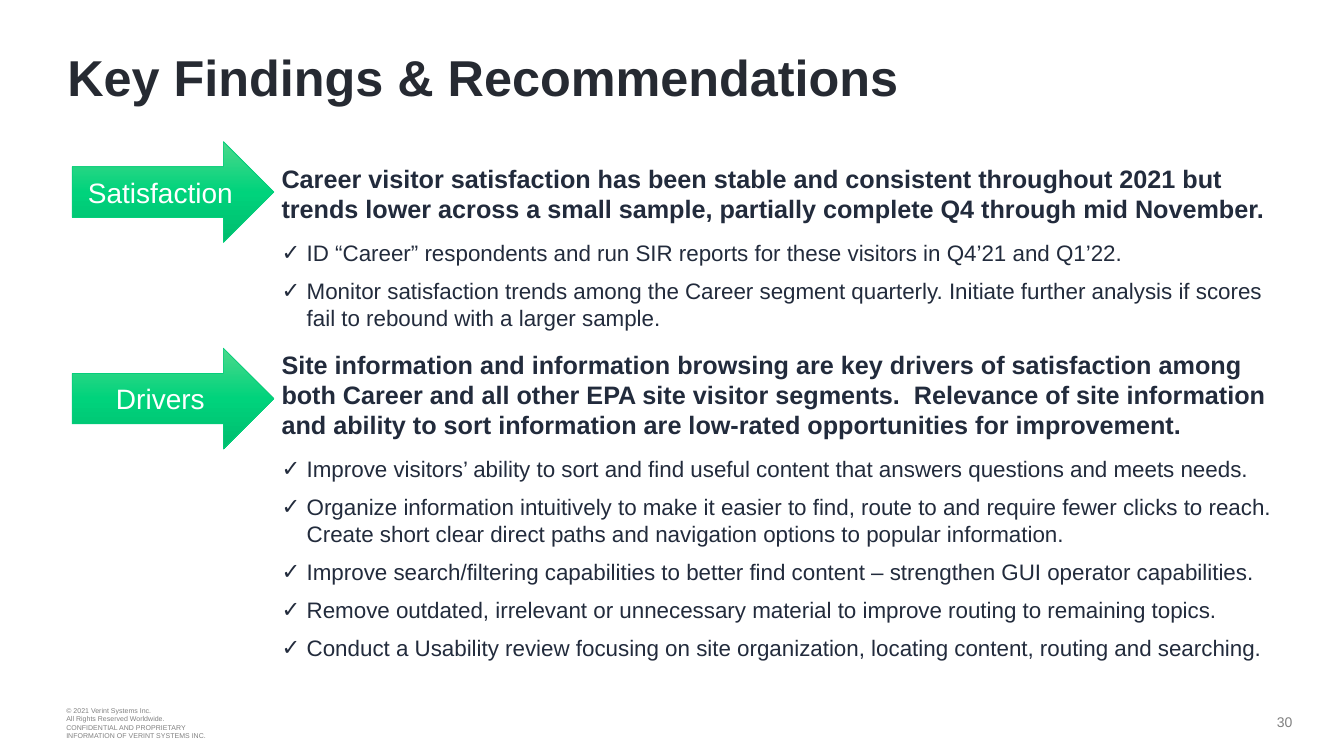
"""Build the Key Findings & Recommendations slide."""
from copy import deepcopy
from dataclasses import dataclass

from lxml.etree import SubElement
from pptx import Presentation
from pptx.dml.color import RGBColor
from pptx.enum.shapes import MSO_SHAPE
from pptx.enum.text import MSO_ANCHOR, PP_ALIGN
from pptx.oxml.ns import qn
from pptx.util import Pt

TITLE = "Key Findings & Recommendations"
FINDINGS = [
    ("Career visitor satisfaction has been stable and consistent throughout 2021 but "
     "trends lower across a small sample, partially complete Q4 through mid November.",
     ["ID “Career” respondents and run SIR reports for these visitors in Q4’21 and Q1’22.",
      "Monitor satisfaction trends among the Career segment quarterly. Initiate further "
      "analysis if scores fail to rebound with a larger sample."]),
    ("Site information and information browsing are key drivers of satisfaction among both "
     "Career and all other EPA site visitor segments.  Relevance of site information and "
     "ability to sort information are low-rated opportunities for improvement.",
     ["Improve visitors’ ability to sort and find useful content that answers questions "
      "and meets needs.",
      "Organize information intuitively to make it easier to find, route to and require fewer "
      "clicks to reach. Create short clear direct paths and navigation options to popular "
      "information.",
      "Improve search/filtering capabilities to better find content – strengthen GUI operator "
      "capabilities.",
      "Remove outdated, irrelevant or unnecessary material to improve routing to remaining "
      "topics.",
      "Conduct a Usability review focusing on site organization, locating content, routing "
      "and searching."]),
]
ARROWS = [("Satisfaction", 101.2), ("Drivers", 248.8)]
COPYRIGHT = [
    "© 2021 Verint Systems Inc.",
    "All Rights Reserved Worldwide.",
    "CONFIDENTIAL AND PROPRIETARY",
    "INFORMATION OF VERINT SYSTEMS INC.",
]
PAGE = "30"


@dataclass(frozen=True)
class Theme:
    """Colours, font and type sizes."""
    font: str = "Arial"
    title: str = "262A32"
    body: str = "222B3C"
    muted: str = "808080"
    label: str = "FFFFFF"
    outline: str = "05CE7B"
    gradient: tuple = ((0, "4BD88B"), (0.5, "00D37C"), (1, "00BC6E"))
    title_size: float = 36
    label_size: float = 20
    finding_size: float = 18
    action_size: float = 16
    page_size: float = 10
    legal_size: float = 5


T = Theme()


def add_run(p, text, size, color, bold=False):
    r = p.add_run()
    r.text = text
    r.font.name, r.font.size, r.font.bold = T.font, Pt(size), bold
    r.font.color.rgb = RGBColor.from_string(color)


def add_box(s, x, y, w, h, anchor=MSO_ANCHOR.MIDDLE):
    tf = s.shapes.add_textbox(Pt(x), Pt(y), Pt(w), Pt(h)).text_frame
    tf.word_wrap = True
    tf.vertical_anchor = anchor
    return tf


def next_paragraph(tf):
    first = tf.paragraphs[0]
    return tf.add_paragraph() if first.runs else first


def add_check(p, indent=18):
    pPr = p._p.get_or_add_pPr()
    pPr.set("marL", str(Pt(indent)))
    pPr.set("indent", str(-Pt(indent)))
    SubElement(pPr, qn("a:buFont"), typeface=T.font)
    SubElement(pPr, qn("a:buChar"), char="✓")


def add_findings(s):
    tf = add_box(s, 194, 113, 723.6, 370, MSO_ANCHOR.TOP)
    for i, (finding, actions) in enumerate(FINDINGS):
        p = next_paragraph(tf)
        p.space_before, p.space_after = Pt(10 if i else 0), Pt(6)
        add_run(p, finding, T.finding_size, T.body, True)
        for action in actions:
            p = tf.add_paragraph()
            p.level = 1
            add_check(p)
            p.space_before, p.space_after = Pt(5), Pt(3)
            add_run(p, action, T.action_size, T.body)


def add_arrow(s, text, y):
    sp = s.shapes.add_shape(MSO_SHAPE.RIGHT_ARROW, Pt(51.6), Pt(y), Pt(144), Pt(72))
    sp.shadow.inherit = False
    sp.fill.gradient()
    sp.fill.gradient_angle = 270
    stops = sp._element.spPr.find(".//" + qn("a:gsLst"))
    stops.append(deepcopy(stops[-1]))
    for stop, (position, color) in zip(sp.fill.gradient_stops, T.gradient):
        stop.position = position
        stop.color.rgb = RGBColor.from_string(color)
    sp.line.color.rgb = RGBColor.from_string(T.outline)
    sp.line.width = Pt(0.5)
    tf = sp.text_frame
    tf.word_wrap = True
    tf.vertical_anchor = MSO_ANCHOR.MIDDLE
    p = tf.paragraphs[0]
    p.alignment = PP_ALIGN.CENTER
    add_run(p, text, T.label_size, T.label)


def main():
    prs = Presentation()
    prs.slide_width, prs.slide_height = Pt(960), Pt(540)
    s = prs.slides.add_slide(prs.slide_layouts[6])

    legal = add_box(s, 40.3, 499.7, 172.8, 33.8)
    for line in COPYRIGHT:
        add_run(next_paragraph(legal), line, T.legal_size, T.muted)

    p = add_box(s, 850.3, 499, 80, 33.8).paragraphs[0]
    p.alignment = PP_ALIGN.RIGHT
    add_run(p, PAGE, T.page_size, T.muted)

    p = add_box(s, 41, 29.5, 878.4, 55.4, MSO_ANCHOR.TOP).paragraphs[0]
    add_run(p, TITLE, T.title_size, T.title, True)

    add_findings(s)
    for text, y in ARROWS:
        add_arrow(s, text, y)
    prs.save("out.pptx")


if __name__ == "__main__":
    main()
